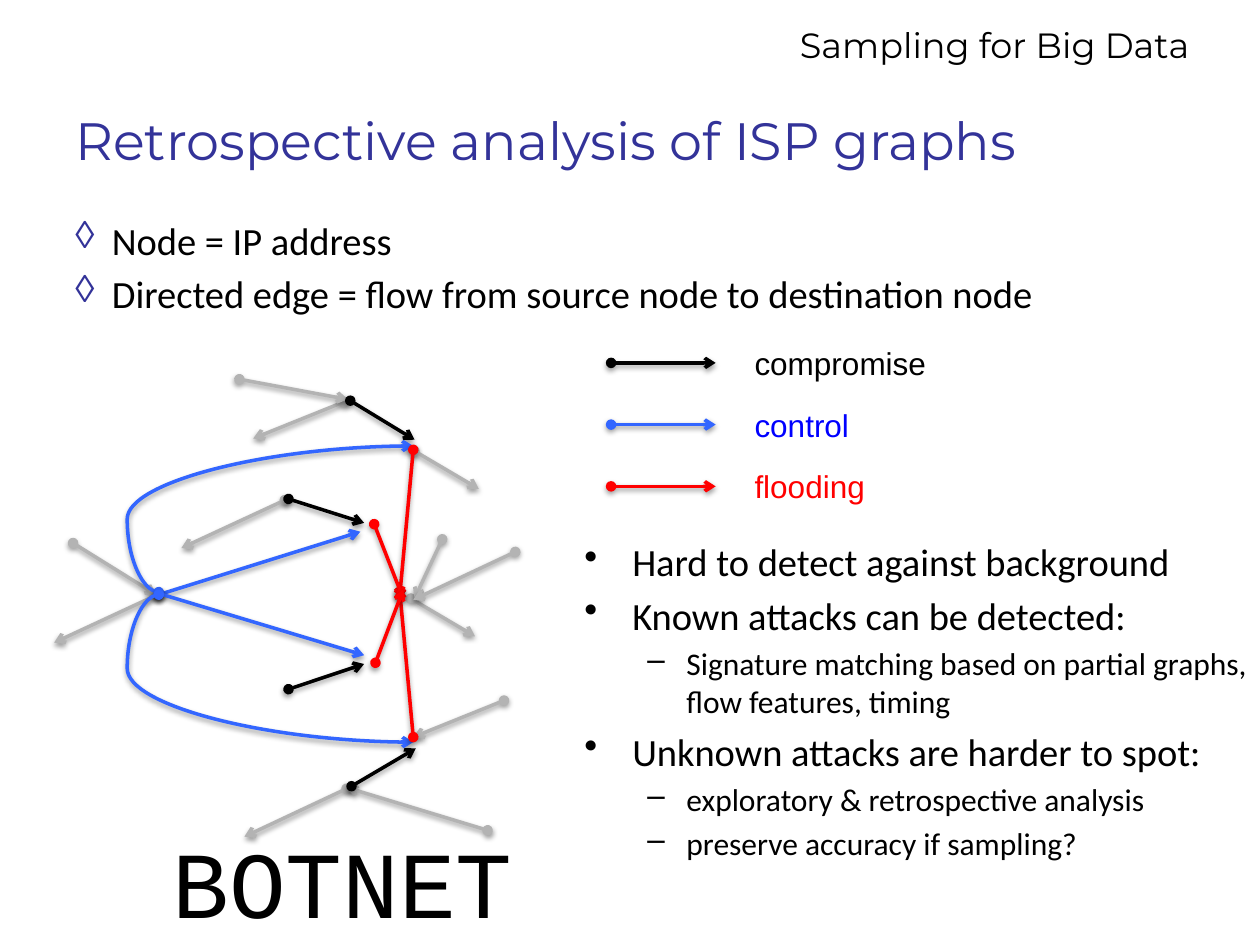
from lxml import etree
from pptx import Presentation
from pptx import util as u
from pptx.dml.color import RGBColor
from pptx.enum import shapes, text
from pptx.oxml import ns, parse_xml

THEME = {
    "black": "000000", "grey": "B3B3B3", "blue": "3366FF", "red": "FF0000",
    "pure": "0000FF", "navy": "333399",
    "head": "Montserrat", "body": "Calibri", "key": "Arial", "mono": "Courier New",
    "top": 20, "title": 30, "main": 22, "sub": 18, "label": 18, "big": 54, "line": 2,
}

# Content: edges are (x1, y1, x2, y2) in inches
BACK = [
    (3.29, 3.58, 3.8, 3.88), (3.26, 4.75, 3.77, 5.05), (3.51, 4.28, 3.29, 4.75),
    (4.09, 4.38, 3.28, 4.76), (2.26, 3.97, 1.44, 4.35), (1.25, 4.72, 0.43, 5.1),
    (2.75, 6.26, 1.94, 6.64), (3.87, 6.59, 2.75, 6.25), (4, 5.56, 3.28, 5.85),
    (2.73, 3.19, 2.01, 3.48), (1.9, 3.01, 2.76, 3.17), (0.58, 4.31, 1.24, 4.72),
]
BREACH = [
    (2.29, 3.96, 2.89, 4.15), (2.78, 3.18, 3.29, 3.49),
    (2.29, 5.47, 2.89, 5.27), (2.79, 6.24, 3.3, 5.94),
]
DIRECT = [(1.26, 4.72, 2.86, 4.22), (1.26, 4.71, 2.89, 5.2)]
CURVED = [(1.26, 4.7, 3.28, 3.54), (1.26, 4.72, 3.28, 5.89)]
FLOOD = [
    (3.28, 3.57, 3.17, 4.76), (2.97, 4.16, 3.2, 4.75),
    (3.28, 5.85, 3.17, 4.66), (2.98, 5.26, 3.2, 4.68),
]
KEYS = [  # label, line colour, text colour, text shadow
    ("compromise", "black", "black", False),
    ("control", "blue", "pure", True),
    ("flooding", "red", "red", True),
]
DEFS = [
    (0, "Node = IP address"),
    (0, "Directed edge = flow from source node to destination node"),
]
NOTES = [
    (0, "Hard to detect against background"),
    (0, "Known attacks can be detected:"),
    (1, "Signature matching based on partial graphs, flow features, timing"),
    (0, "Unknown attacks are harder to spot:"),
    (1, "exploratory & retrospective analysis"),
    (1, "preserve accuracy if sampling?"),
]
# Per level: mark, left edge, hang, size
DIAMOND = [("◊", 0.29, 0.29, "main")]
DOTS = [("•", 0.38, 0.38, "main"), ("–", 0.81, 0.31, "sub")]


def shade():
    return parse_xml(
        f'<a:effectLst {ns.nsdecls("a")}><a:outerShdw blurRad="{u.Pt(3.1)}" '
        f'dist="{u.Pt(1.6)}" dir="5400000" rotWithShape="0"><a:srgbClr val="000000">'
        '<a:alpha val="38000"/></a:srgbClr></a:outerShdw></a:effectLst>')


def add_edge(home, ends, tone, bend=None):
    kind = shapes.MSO_CONNECTOR.STRAIGHT if bend is None else shapes.MSO_CONNECTOR.CURVE
    edge = home.add_connector(kind, *map(u.Inches, ends))
    edge.line.width = u.Pt(THEME["line"])
    edge.line.color.rgb = RGBColor.from_string(THEME[tone])
    line = edge.line._get_or_add_ln()
    for tag, tip in (("a:headEnd", "oval"), ("a:tailEnd", "arrow")):
        etree.SubElement(line, ns.qn(tag), type=tip)
    props = edge._element.spPr
    props.append(shade())
    if bend is not None:
        guide = props.find(ns.qn("a:prstGeom")).get_or_add_avLst()
        etree.SubElement(guide, ns.qn("a:gd"), name="adj1", fmla=f"val {round(bend * 100000)}")


def add_box(home, area, wrap=True):
    frame = home.add_textbox(*map(u.Inches, area)).text_frame
    frame.word_wrap = wrap
    return frame


def add_run(para, words, face, size, tone):
    run = para.add_run()
    run.text = words
    run.font.name = THEME[face]
    run.font.size = u.Pt(THEME[size])
    run.font.color.rgb = RGBColor.from_string(THEME[tone])
    return run


def add_list(home, area, items, marks, tint):
    frame = add_box(home, area)
    for i, (level, words) in enumerate(items):
        para = frame.add_paragraph() if i else frame.paragraphs[0]
        mark, left, hang, size = marks[level]
        para.level = level
        para.space_before = u.Pt(THEME[size] * 0.2)
        props = para._p.get_or_add_pPr()
        props.set("marL", str(u.Inches(left)))
        props.set("indent", str(-u.Inches(hang)))
        color = etree.SubElement(props, ns.qn("a:buClr"))
        etree.SubElement(color, ns.qn("a:srgbClr"), val=THEME[tint])
        etree.SubElement(props, ns.qn("a:buChar"), char=mark)
        add_run(para, words, "body", size, "black")


def main():
    deck = Presentation()
    deck.slide_width, deck.slide_height = u.Inches(10), u.Inches(7.5)
    slide = deck.slides.add_slide(deck.slide_layouts[6])
    home = slide.shapes

    # Running header
    para = add_box(home, (6.01, 0.14, 3.53, 0.77), wrap=False).paragraphs[0]
    para.alignment = text.PP_ALIGN.RIGHT
    add_run(para, "Sampling for Big Data", "head", "top", "black")

    # Background traffic
    group = home.add_group_shape().shapes
    for ends in BACK:
        add_edge(group, ends, "grey")

    # Title and definitions
    frame = add_box(home, (0.5, 0.67, 9, 0.88))
    frame.vertical_anchor = text.MSO_ANCHOR.MIDDLE
    add_run(frame.paragraphs[0], "Retrospective analysis of ISP graphs", "head", "title", "navy")
    add_list(home, (0.5, 1.67, 9, 1.03), DEFS, DIAMOND, "navy")

    # Compromise, control and flooding edges
    for ends in BREACH:
        add_edge(home, ends, "black")
    group = home.add_group_shape().shapes
    for straight, curve in zip(DIRECT, CURVED):
        add_edge(group, straight, "blue")
        add_edge(group, curve, "blue", bend=-0.124)
    group = home.add_group_shape().shapes
    for ends in FLOOD:
        add_edge(group, ends, "red")

    # Legend
    group = home.add_group_shape().shapes
    for i, (words, tone, ink, lift) in enumerate(KEYS):
        y = 2.88 + 0.49 * i
        add_edge(group, (4.85, y, 5.68, y), tone)
        para = add_box(group, (5.89, y - 0.2, 1.66, 0.4)).paragraphs[0]
        run = add_run(para, words, "key", "label", ink)
        if lift:
            run._r.rPr.find(ns.qn("a:solidFill")).addnext(shade())

    # Findings and caption
    add_list(home, (4.54, 4.22, 5.6, 1.96), NOTES, DOTS, "black")
    para = add_box(home, (1.27, 6.49, 3.35, 1.01)).paragraphs[0]
    add_run(para, "BOTNET", "mono", "big", "black")

    deck.save("out.pptx")


if __name__ == "__main__":
    main()
